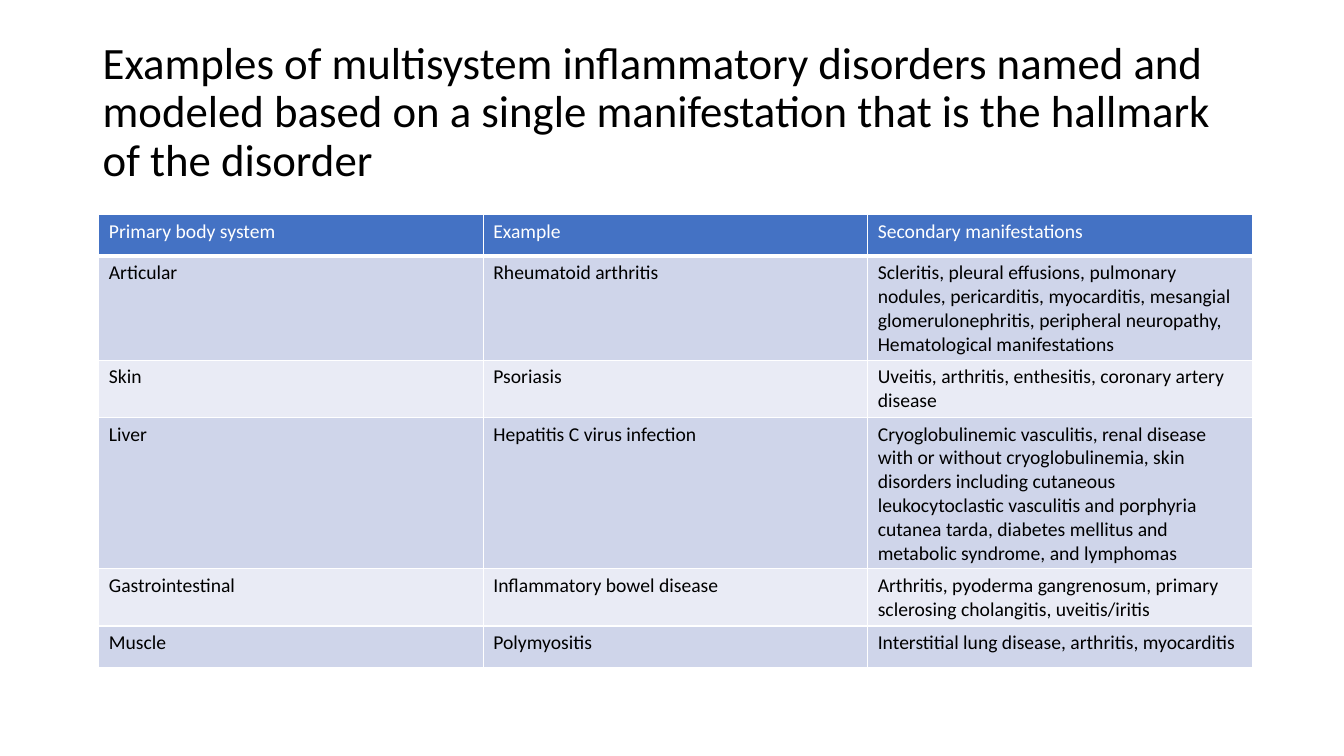
from lxml import etree
from pptx import Presentation
from pptx.dml.color import RGBColor
from pptx.enum.text import MSO_ANCHOR
from pptx.oxml.ns import qn
from pptx.util import Inches, Pt

MIDDLE = MSO_ANCHOR.MIDDLE
FONT = "Calibri"
WHITE, BLACK = "FFFFFF", "000000"
HEADER_FILL = "4472C4"
BAND_FILLS = ("CFD5EA", "E9EBF5")

HEADING = (
    "Examples of multisystem inflammatory disorders named and modeled "
    "based on a single manifestation that is the hallmark of the disorder"
)
DISORDERS = [
    ("Primary body system", "Example", "Secondary manifestations"),
    ("Articular", "Rheumatoid arthritis",
     "Scleritis, pleural effusions, pulmonary nodules, pericarditis, "
     "myocarditis, mesangial glomerulonephritis, peripheral neuropathy, "
     "Hematological manifestations"),
    ("Skin", "Psoriasis",
     "Uveitis, arthritis, enthesitis, coronary artery disease"),
    ("Liver", "Hepatitis C virus infection",
     "Cryoglobulinemic vasculitis, renal disease with or without "
     "cryoglobulinemia, skin disorders including cutaneous leukocytoclastic "
     "vasculitis and porphyria cutanea tarda, diabetes mellitus and "
     "metabolic syndrome, and lymphomas"),
    ("Gastrointestinal", "Inflammatory bowel disease",
     "Arthritis, pyoderma gangrenosum, primary sclerosing cholangitis, "
     "uveitis/iritis"),
    ("Muscle", "Polymyositis",
     "Interstitial lung disease, arthritis, myocarditis"),
]


def rgb(value):
    return RGBColor.from_string(value)


def add_run(paragraph, text, size, color):
    run = paragraph.add_run()
    run.text = text
    run.font.name = FONT
    run.font.size = Pt(size)
    run.font.bold = False
    run.font.color.rgb = rgb(color)


def add_borders(cell, bottom_width):
    properties = cell._tc.get_or_add_tcPr()
    for side, width in (("L", 1), ("R", 1), ("T", 1), ("B", bottom_width)):
        border = etree.SubElement(properties, qn(f"a:ln{side}"), w=str(Pt(width)))
        fill = etree.SubElement(border, qn("a:solidFill"))
        etree.SubElement(fill, qn("a:srgbClr"), val=WHITE)


def add_heading(slide, left, top, width, height):
    heading = slide.shapes.add_textbox(
        Inches(left), Inches(top), Inches(width), Inches(height))
    frame = heading.text_frame
    frame.word_wrap = True
    frame.vertical_anchor = MIDDLE
    paragraph = frame.paragraphs[0]
    paragraph.line_spacing = 0.9
    add_run(paragraph, HEADING, 32, BLACK)


def add_disorder_table(slide, left, top, width, row_height):
    table = slide.shapes.add_table(
        len(DISORDERS), len(DISORDERS[0]), Inches(left), Inches(top),
        Inches(width), Inches(row_height * len(DISORDERS))).table
    for row, entries in enumerate(DISORDERS):
        is_header = row == 0
        fill = HEADER_FILL if is_header else BAND_FILLS[(row - 1) % 2]
        for column, entry in enumerate(entries):
            cell = table.cell(row, column)
            add_borders(cell, 3 if is_header else 1)
            cell.fill.solid()
            cell.fill.fore_color.rgb = rgb(fill)
            add_run(cell.text_frame.paragraphs[0], entry, 14,
                    WHITE if is_header else BLACK)


def main():
    deck = Presentation()
    deck.slide_width = Inches(13.33)
    deck.slide_height = Inches(7.5)
    slide = deck.slides.add_slide(deck.slide_layouts[6])
    add_heading(slide, 0.92, 0.4, 11.5, 1.45)
    add_disorder_table(slide, 0.98, 2.13, 11.44, 0.41)
    deck.save("out.pptx")


if __name__ == "__main__":
    main()
